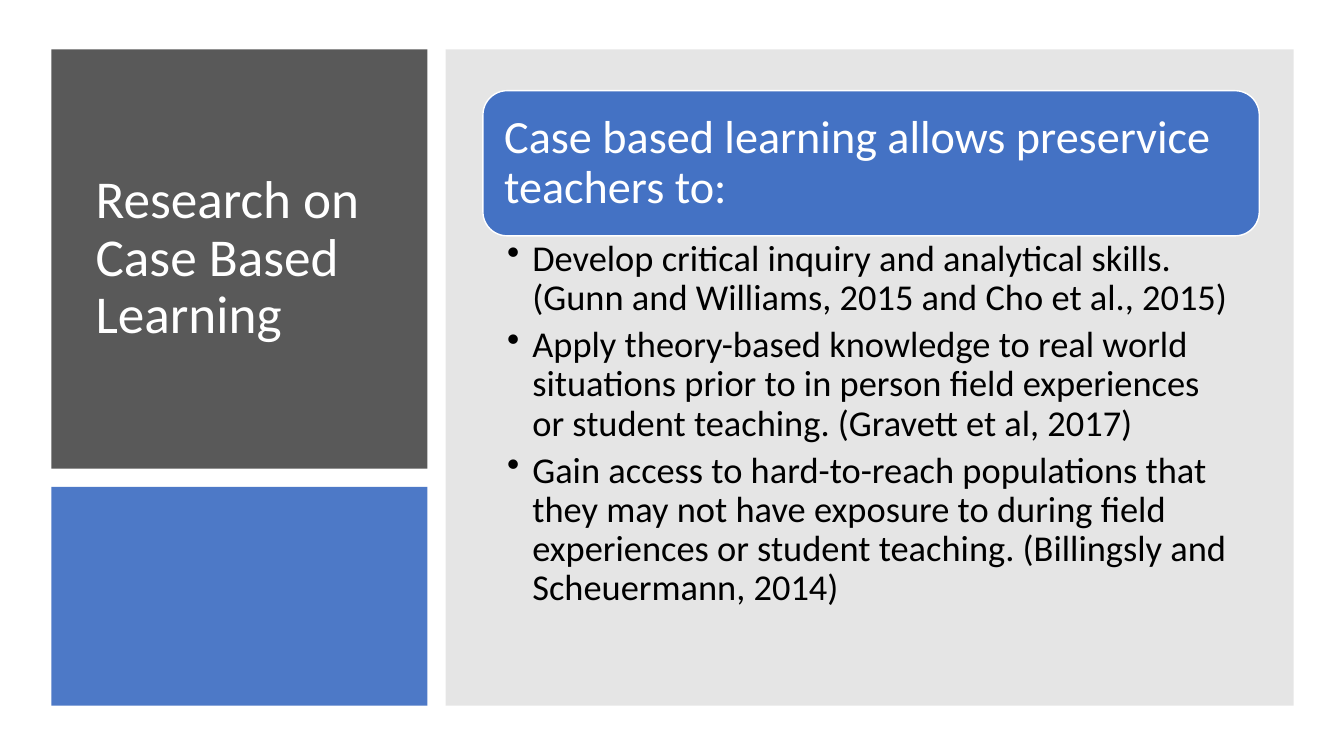
import pptx
import pptx.dml.color
import pptx.enum.shapes
import pptx.enum.text
import pptx.oxml.ns
import pptx.util
from lxml import etree

PX = 9144  # EMU in one px, at 100 px to the inch
FONT = "Calibri"
WHITE, BLACK, BLUE = "FFFFFF", "000000", "4472C4"
DARK, GRAY = "595959", "808080"

RECT = pptx.enum.shapes.MSO_SHAPE.RECTANGLE
ROUNDED = pptx.enum.shapes.MSO_SHAPE.ROUNDED_RECTANGLE
TOP = pptx.enum.text.MSO_ANCHOR.TOP
MIDDLE = pptx.enum.text.MSO_ANCHOR.MIDDLE

TITLE = "Research on Case Based Learning"
HEADING = "Case based learning allows preservice teachers to:"
BENEFITS = [
    "Develop critical inquiry and analytical skills.\v"
    "(Gunn and Williams, 2015 and Cho et al., 2015)",
    "Apply theory-based knowledge to real world situations prior to "
    "in person field experiences or student teaching. (Gravett et al, 2017)",
    "Gain access to hard-to-reach populations that they may not have exposure "
    "to during field experiences or student teaching. "
    "(Billingsly and Scheuermann, 2014)",
]


def px(*lengths):
    return [pptx.util.Emu(length * PX) for length in lengths]


def rgb(code):
    return pptx.dml.color.RGBColor.from_string(code)


def add_panel(page, kind, area, color, opacity=100, outline=None):
    panel = page.shapes.add_shape(kind, *px(*area))
    panel.shadow.inherit = False
    panel.fill.solid()
    panel.fill.fore_color.rgb = rgb(color)
    if opacity < 100:
        tint = panel.fill._xPr.find(".//" + pptx.oxml.ns.qn("a:srgbClr"))
        alpha = etree.SubElement(tint, pptx.oxml.ns.qn("a:alpha"))
        alpha.set("val", str(opacity * 1000))
    if outline:
        panel.line.color.rgb = rgb(outline)
        panel.line.width = pptx.util.Pt(1)
    else:
        panel.line.fill.background()
    return panel


def add_bullet(para):
    para.level = 1
    properties = para._p.get_or_add_pPr()
    properties.set("marL", str(25 * PX))
    properties.set("indent", str(-25 * PX))
    bullet = etree.SubElement(properties, pptx.oxml.ns.qn("a:buChar"))
    bullet.set("char", "•")


def write(box, texts, size, color, anchor, insets, gap=0, bulleted=False):
    frame = box.text_frame
    frame.word_wrap = True
    frame.vertical_anchor = anchor
    (frame.margin_left, frame.margin_top,
     frame.margin_right, frame.margin_bottom) = px(*insets)
    for index, text in enumerate(texts):
        para = frame.add_paragraph() if index else frame.paragraphs[0]
        para.text = text
        para.alignment = pptx.enum.text.PP_ALIGN.LEFT
        para.line_spacing = 0.9
        para.space_after = pptx.util.Pt(gap)
        if bulleted:
            add_bullet(para)
        for span in para.runs:
            span.font.name = FONT
            span.font.size = pptx.util.Pt(size)
            span.font.color.rgb = rgb(color)


def main():
    deck = pptx.Presentation()
    deck.slide_width, deck.slide_height = px(1333, 750)
    page = deck.slides.add_slide(deck.slide_layouts[6])

    # Background panels
    add_panel(page, RECT, (51, 49, 373, 416), DARK)
    add_panel(page, RECT, (51, 483, 373, 217), BLUE, opacity=95)
    add_panel(page, RECT, (442, 49, 841, 651), GRAY, opacity=20)

    # Title
    title = page.shapes.add_textbox(*px(85, 80, 311, 354))
    write(title, [TITLE], 38, WHITE, MIDDLE, (10, 5, 10, 5))

    # Heading bar
    heading = add_panel(page, ROUNDED, (479, 90, 770, 144), BLUE, outline=WHITE)
    write(heading, [HEADING], 33, WHITE, MIDDLE, (14, 14, 14, 14))

    # Benefits with their citations
    benefits = page.shapes.add_textbox(*px(479, 233, 770, 426))
    write(benefits, BENEFITS, 26, BLACK, TOP, (24, 5, 26, 5), gap=5.5, bulleted=True)

    deck.save("out.pptx")


if __name__ == "__main__":
    main()
